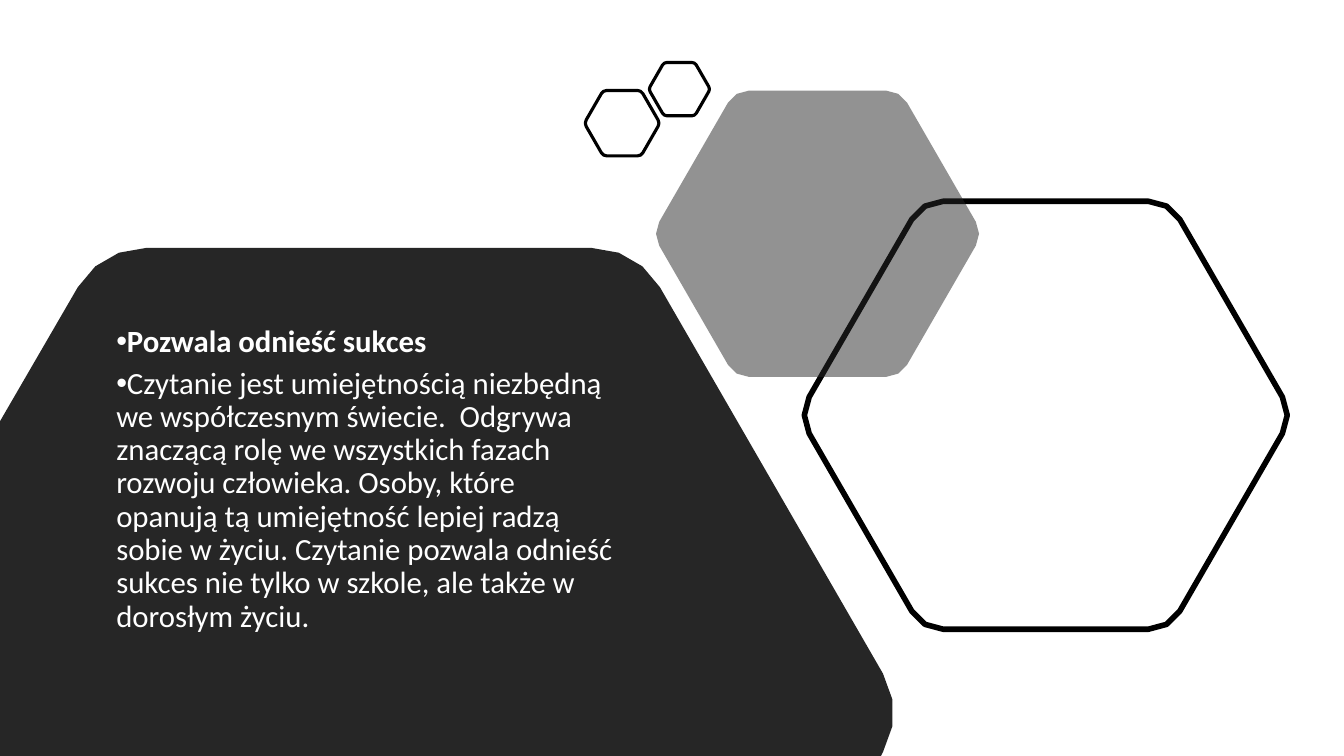
"""Build a slide on reading and success, set among rounded hexagons."""
import math

import lxml.etree
import pptx
import pptx.dml.color
import pptx.oxml.ns
import pptx.util

Pt = pptx.util.Pt
qn = pptx.oxml.ns.qn

COLORS = {"panel": "262626", "outline": "000000", "text": "FFFFFF"}
SLIDE_WIDTH, SLIDE_HEIGHT = 960, 540
BENEFIT = "Pozwala odnieść sukces"
EXPLANATION = (
    "Czytanie jest umiejętnością niezbędną we współczesnym świecie.  Odgrywa "
    "znaczącą rolę we wszystkich fazach rozwoju człowieka. Osoby, które opanują "
    "tą umiejętność lepiej radzą sobie w życiu. Czytanie pozwala odnieść sukces "
    "nie tylko w szkole, ale także w dorosłym życiu."
)


def rgb(name):
    return pptx.dml.color.RGBColor.from_string(COLORS[name])


def rounded_corner(center, size, radius, angle, step):
    reach = size - radius / math.cos(math.radians(30))
    x = center[0] + reach * math.cos(math.radians(angle))
    y = center[1] + reach * math.sin(math.radians(angle))
    turns = [math.radians(angle + offset) for offset in range(-30, 31, step)]
    return [(x + radius * math.cos(t), y + radius * math.sin(t)) for t in turns]


def hexagon_corners(center, size, radius, angles=range(0, 360, 60), step=30):
    return [point for angle in angles
            for point in rounded_corner(center, size, radius, angle, step)]


def add_outline(slide, points, fill=None, alpha=None, line_width=None):
    start, *rest = [(Pt(x), Pt(y)) for x, y in points]
    builder = slide.shapes.build_freeform(*start)
    builder.add_line_segments(rest, close=True)
    hexagon = builder.convert_to_shape()
    hexagon.shadow.inherit = False
    if fill:
        hexagon.fill.solid()
        hexagon.fill.fore_color.rgb = rgb(fill)
    else:
        hexagon.fill.background()
    if alpha:
        color = hexagon.fill._xPr.find(".//" + qn("a:srgbClr"))
        lxml.etree.SubElement(color, qn("a:alpha")).set("val", str(alpha * 1000))
    if line_width:
        hexagon.line.color.rgb = rgb("outline")
        hexagon.line.width = Pt(line_width)
    else:
        hexagon.line.fill.background()


def add_bullet(paragraph):
    properties = paragraph._p.get_or_add_pPr()
    properties.set("marL", "0")
    properties.set("indent", str(-Pt(18)))
    lxml.etree.SubElement(properties, qn("a:buFont")).set("typeface", "Arial")
    lxml.etree.SubElement(properties, qn("a:buChar")).set("char", "•")


def add_statement(slide, left, top, width, height):
    frame = slide.shapes.add_textbox(Pt(left), Pt(top), Pt(width), Pt(height)).text_frame
    frame.word_wrap = True
    frame.text = "\n".join([BENEFIT, EXPLANATION])
    for index, paragraph in enumerate(frame.paragraphs):
        paragraph.line_spacing = 0.9
        paragraph.space_after = Pt(6)
        add_bullet(paragraph)
        font = paragraph.runs[0].font
        font.name = "Calibri"
        font.size = Pt(22)
        font.bold = index == 0
        font.color.rgb = rgb("text")


def main():
    deck = pptx.Presentation()
    deck.slide_width, deck.slide_height = Pt(SLIDE_WIDTH), Pt(SLIDE_HEIGHT)
    slide = deck.slides.add_slide(deck.slide_layouts[6])

    panel = [(0, SLIDE_HEIGHT), (0, 301)]
    panel += hexagon_corners((263.5, 509.2), 383.4, 56, (240, 300, 360), 20)
    panel += [(629.3, SLIDE_HEIGHT)]
    add_outline(slide, panel, fill="panel")

    add_outline(slide, hexagon_corners((747, 296.6), 176.5, 26), line_width=4)
    add_outline(slide, hexagon_corners((584, 167), 118, 17), fill="panel", alpha=50)
    for center, size, radius in [((444.4, 88), 27, 4.5), ((485.3, 63.7), 22, 3.6)]:
        add_outline(slide, hexagon_corners(center, size, radius), line_width=2.25)

    add_statement(slide, 76, 229.3, 374, 243.4)
    deck.save("out.pptx")


if __name__ == "__main__":
    main()
